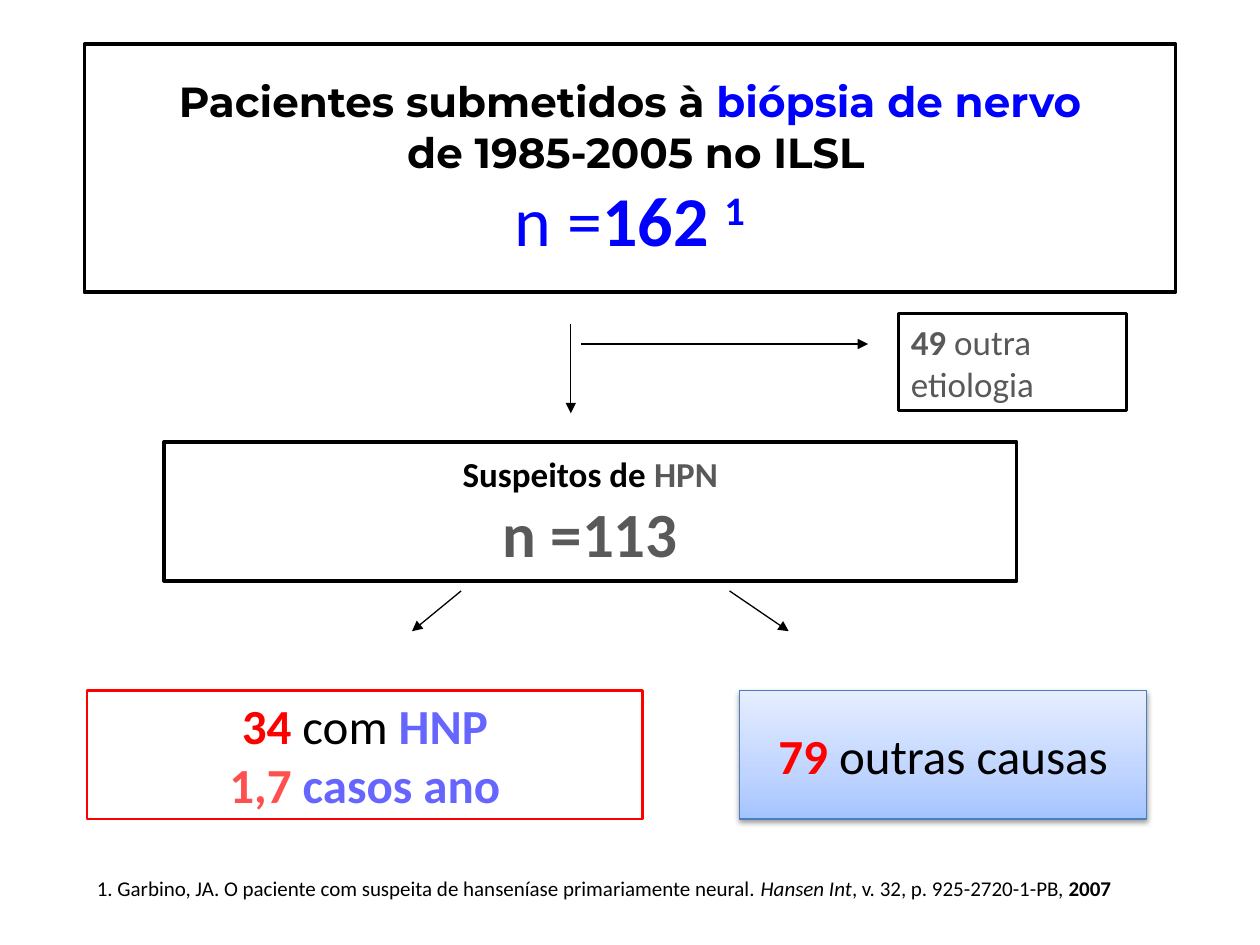
from lxml import etree
from pptx import Presentation
from pptx.dml.color import RGBColor as RGB
from pptx.enum.shapes import MSO_CONNECTOR as Conn, MSO_SHAPE as Shape
from pptx.enum.text import MSO_ANCHOR as Anchor, PP_ALIGN as Align
from pptx.oxml import parse_xml
from pptx.oxml.ns import qn
from pptx.util import Inches, Pt

HEX = {"black": "000000", "white": "FFFFFF", "blue": "0000FF", "red": "FF0000",
       "gray": "595959", "lilac": "6666FF", "coral": "FF5050", "edge": "4B7EBC"}
COLOR = {name: RGB.from_string(code) for name, code in HEX.items()}
STOPS = [(0, "A4C4FF"), (35, "BFD4FF"), (100, "E6EEFF")]
NS = 'xmlns:a="http://schemas.openxmlformats.org/drawingml/2006/main"'


def write(frame, paras, align):
    """Fill a text frame; each run is (text, color, size, format values)."""
    for i, runs in enumerate(paras):
        para = frame.paragraphs[0] if i == 0 else frame.add_paragraph()
        para.alignment = align
        for text, color, size, form in runs:
            run = para.add_run()
            run.text = text
            run.font.size = Pt(size)
            run.font.color.rgb = COLOR[color]
            for key, val in {"name": "Calibri", "bold": False, **form}.items():
                setattr(run.font, key, val)


def add_box(at, edge, width, paras, align=Align.CENTER, wrap=False):
    """Draw a white framed box with text."""
    box = slide.shapes.add_shape(Shape.RECTANGLE, *map(Inches, at))
    box.shadow.inherit = False
    box.fill.solid()
    box.fill.fore_color.rgb = COLOR["white"]
    box.line.color.rgb = COLOR[edge]
    box.line.width = Pt(width)
    box.text_frame.word_wrap = wrap
    box.text_frame.vertical_anchor = Anchor.MIDDLE
    write(box.text_frame, paras, align)
    return box


prs = Presentation()
prs.slide_width, prs.slide_height = Inches(10), Inches(7.5)
slide = prs.slides.add_slide(prs.slide_layouts[6])

BOLD = {"bold": True}
HEAD = {"name": "Montserrat", "bold": True}

# All biopsied patients
top = add_box((0.67, 0.35, 8.66, 1.97), "black", 2, [
    [("Pacientes submetidos à ", "black", 24, HEAD),
     ("biópsia de nervo", "blue", 24, HEAD)],
    [(" de 1985-2005 no ILSL", "black", 24, HEAD)],
    [("n =", "blue", 40, {}), ("162 ", "blue", 40, BOLD), ("1", "blue", 40, BOLD)],
])
note = top.text_frame.paragraphs[-1].runs[-1]
note.font._element.set("baseline", "30000")

# Suspected cases
add_box((1.3, 3.51, 6.77, 1.1), "black", 2, [
    [("Suspeitos de ", "black", 20, BOLD), ("HPN", "gray", 20, BOLD)],
    [("n =113", "gray", 36, BOLD)],
])

# Excluded cases
add_box((7.13, 2.49, 1.81, 0.77), "black", 2, [
    [("49 ", "gray", 20, BOLD), ("outra etiologia", "gray", 20, {})],
], Align.LEFT, True)

# Outcomes
add_box((0.69, 5.48, 4.41, 1.02), "red", 1.5, [
    [("34 ", "red", 28, BOLD), ("com ", "black", 28, {}), ("HNP", "lilac", 28, BOLD)],
    [("1,7 ", "coral", 28, BOLD), ("casos ano", "lilac", 28, BOLD)],
])
other = add_box((5.87, 5.48, 3.23, 1.02), "edge", 0.75, [
    [("79 ", "red", 28, BOLD), ("outras causas", "black", 28, {})],
])

# Gradient and shadow of the last outcome
stops = "".join(f'<a:gs pos="{pos * 1000}"><a:srgbClr val="{code}"/></a:gs>'
                for pos, code in STOPS)
props = other._element.spPr
props.replace(props.find(qn("a:solidFill")), parse_xml(
    f'<a:gradFill {NS} rotWithShape="1"><a:gsLst>{stops}</a:gsLst>'
    '<a:lin ang="16200000" scaled="0"/></a:gradFill>'))
props.find(qn("a:effectLst")).append(parse_xml(
    f'<a:outerShdw {NS} blurRad="{Pt(3.1)}" dist="{Pt(1.6)}" dir="5400000" '
    'rotWithShape="0"><a:srgbClr val="000000"><a:alpha val="38000"/>'
    '</a:srgbClr></a:outerShdw>'))

# Arrows
for ends in [(4.53, 2.57, 4.53, 3.28), (4.61, 2.73, 6.89, 2.73),
             (3.66, 4.69, 3.27, 5.01), (5.79, 4.69, 6.26, 5.01)]:
    arrow = slide.shapes.add_connector(Conn.STRAIGHT, *map(Inches, ends))
    arrow.line.color.rgb = COLOR["black"]
    arrow.line.width = Pt(0.75)
    etree.SubElement(arrow.line._get_or_add_ln(), qn("a:tailEnd"), type="triangle")
    etree.SubElement(arrow._element.spPr, qn("a:effectLst"))

# Reference
ref = slide.shapes.add_textbox(*map(Inches, (0.67, 6.9, 8.58, 0.3)))
ref.text_frame.word_wrap = True
write(ref.text_frame, [[
    ("1. Garbino, JA. O paciente com suspeita de hanseníase primariamente neural. ",
     "black", 12, {}),
    ("Hansen Int", "black", 12, {"italic": True}),
    (", v. 32, p. 925-2720-1-PB, ", "black", 12, {}),
    ("2007", "black", 12, BOLD),
]], Align.LEFT)

prs.save("out.pptx")
